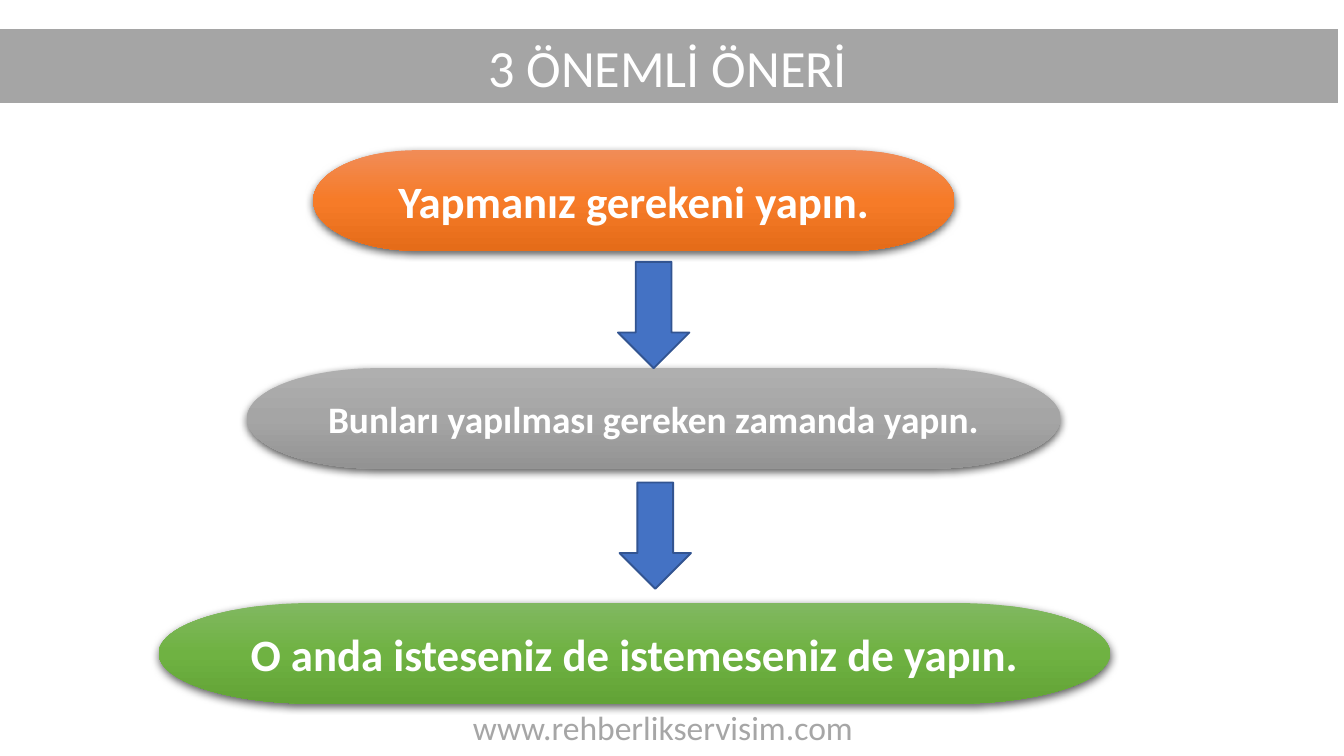
from dataclasses import dataclass

from lxml.etree import SubElement
from pptx import Presentation
from pptx.dml.color import RGBColor
from pptx.enum.shapes import MSO_SHAPE as Preset
from pptx.enum.text import MSO_ANCHOR as Anchor, MSO_AUTO_SIZE as AutoSize, PP_ALIGN as Align
from pptx.oxml.ns import qn
from pptx.util import Cm, Pt

WHITE = "FFFFFF"
STEP_HEIGHT = 1.9
ARROW_WIDTH, ARROW_HEIGHT = 1.35, 2.01


@dataclass
class Step:
    text: str
    left: float
    top: float
    width: float
    size: int
    gradient: tuple[str, str, str]


@dataclass
class Arrow:
    left: float
    top: float


STEPS = [
    Step("Yapmanız gerekeni yapın.", 5.92, 2.84, 12.12, 24, ("F18C57", "F67B28", "E56C19")),
    Step("Bunları yapılması gereken zamanda yapın.", 4.67, 6.96, 15.37, 20,
         ("AFAFAF", "A5A5A5", "939393")),
    Step("O anda isteseniz de istemeseniz de yapın.", 3, 11.4, 17.98, 24,
         ("81B861", "6FB242", "62A336")),
]
ARROWS = [Arrow(11.68, 4.95), Arrow(11.71, 9.12)]


def rgb(color: str) -> RGBColor:
    return RGBColor.from_string(color)


def paint(shape, fill: str, line: str, width: float) -> None:
    shape.fill.solid()
    shape.fill.fore_color.rgb = rgb(fill)
    shape.line.color.rgb = rgb(line)
    shape.line.width = Pt(width)


def write(shape, text: str, size: float, color: str, align: Align, bold: bool = False) -> None:
    frame = shape.text_frame
    frame.text = text
    paragraph = frame.paragraphs[0]
    paragraph.alignment = align
    font = paragraph.runs[0].font
    font.name, font.size, font.bold = "Calibri", Pt(size), bold
    font.color.rgb = rgb(color)


def fill_gradient(shape, colors: tuple[str, str, str]) -> None:
    shape.fill.gradient()
    shape.fill.gradient_angle = 270
    stops = shape._element.spPr.find(".//" + qn("a:gsLst"))
    for stop in list(stops):
        stops.remove(stop)
    for position, color in zip((0, 50000, 100000), colors):
        stop = SubElement(stops, qn("a:gs"), pos=str(position))
        SubElement(stop, qn("a:srgbClr"), val=color)


def drop_shadow(shape) -> None:
    shape.shadow.inherit = False
    effects = shape._element.spPr.find(qn("a:effectLst"))
    shadow = SubElement(effects, qn("a:outerShdw"), blurRad=str(Pt(4.5)), dist=str(Pt(1.5)),
                        dir="5400000", algn="ctr", rotWithShape="0")
    color = SubElement(shadow, qn("a:srgbClr"), val="000000")
    SubElement(color, qn("a:alpha"), val="63000")


def add_title(slide, text: str) -> None:
    title = slide.shapes.title
    title.left, title.top, title.width, title.height = Cm(-0.08), Cm(0.53), Cm(25.4), Cm(1.45)
    paint(title, "A5A5A5", WHITE, 1.5)
    title.text_frame.auto_size = AutoSize.NONE
    title.text_frame.vertical_anchor = Anchor.MIDDLE
    write(title, text, 28, WHITE, Align.CENTER)


def add_step(slide, step: Step) -> None:
    pill = slide.shapes.add_shape(Preset.FLOWCHART_TERMINATOR, Cm(step.left), Cm(step.top),
                                  Cm(step.width), Cm(STEP_HEIGHT))
    fill_gradient(pill, step.gradient)
    pill.line.fill.background()
    drop_shadow(pill)
    pill.text_frame.word_wrap = True
    pill.text_frame.vertical_anchor = Anchor.MIDDLE
    write(pill, step.text, step.size, WHITE, Align.CENTER, bold=True)


def add_arrow(slide, arrow: Arrow) -> None:
    pointer = slide.shapes.add_shape(Preset.DOWN_ARROW, Cm(arrow.left), Cm(arrow.top),
                                     Cm(ARROW_WIDTH), Cm(ARROW_HEIGHT))
    paint(pointer, "4472C4", "325491", 1)
    pointer.shadow.inherit = False


def add_website(slide, address: str) -> None:
    website = slide.shapes.add_textbox(Cm(8.69), Cm(13.23), Cm(8.05), Cm(0.76))
    website.text_frame.word_wrap = True
    write(website, address, 18, "A6A6A6", Align.LEFT)


def main() -> None:
    deck = Presentation()
    deck.slide_width, deck.slide_height = Cm(25.4), Cm(14.29)
    slide = deck.slides.add_slide(deck.slide_layouts[5])
    add_title(slide, "3 ÖNEMLİ ÖNERİ")
    for step in STEPS:
        add_step(slide, step)
    for arrow in ARROWS:
        add_arrow(slide, arrow)
    add_website(slide, "www.rehberlikservisim.com")
    deck.save("out.pptx")


if __name__ == "__main__":
    main()
